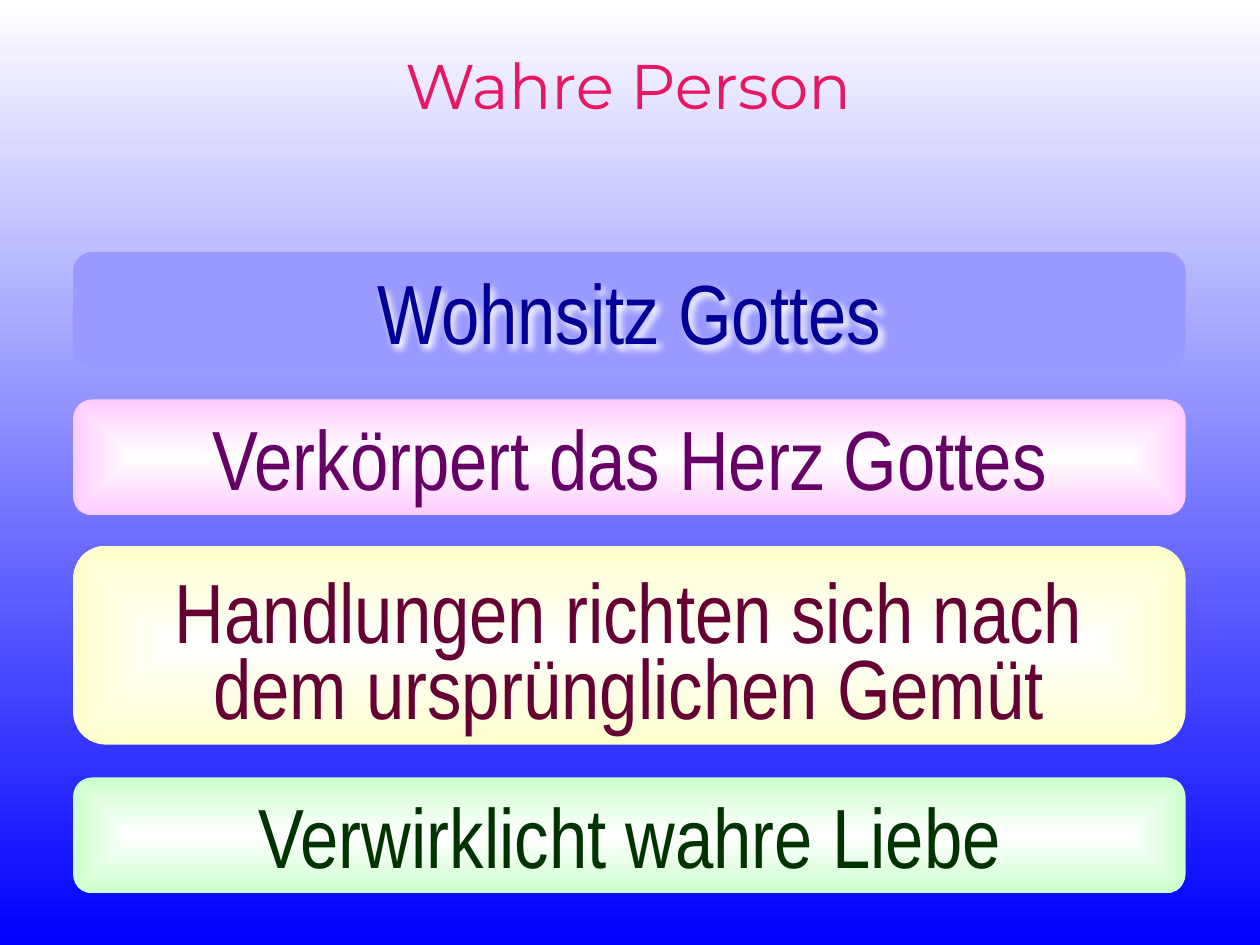
from lxml import etree
from pptx import Presentation
from pptx.dml.color import RGBColor
from pptx.enum.shapes import MSO_AUTO_SHAPE_TYPE as Preset
from pptx.enum.text import MSO_AUTO_SIZE as AutoSize, PP_ALIGN as Align
from pptx.oxml import parse_xml
from pptx.oxml.ns import nsdecls, qn
from pptx.util import Inches, Pt

WHITE = RGBColor(0xFF, 0xFF, 0xFF)
BLUE = RGBColor(0x00, 0x00, 0xFF)
CRIMSON = RGBColor(0xE8, 0x17, 0x66)
PERIWINKLE = RGBColor(0x99, 0x99, 0xFF)
PINK = RGBColor(0xFF, 0xCC, 0xFF)
CREAM = RGBColor(0xFF, 0xFF, 0xCC)
MINT = RGBColor(0xCC, 0xFF, 0xCC)
NAVY = RGBColor(0x00, 0x00, 0x99)
PURPLE = RGBColor(0x66, 0x00, 0x66)
MAROON = RGBColor(0x66, 0x00, 0x33)
FOREST = RGBColor(0x00, 0x33, 0x00)

OUTLINE = (f'<a:ln {nsdecls("a")} w="3175"><a:solidFill>'
           '<a:srgbClr val="FFFFFF"/></a:solidFill></a:ln>')
CENTRE_PATH = (f'<a:path {nsdecls("a")} path="shape"><a:fillToRect '
               'l="50000" t="50000" r="50000" b="50000"/></a:path>')


class SlideWriter:
    """Holds the text style and the slide being filled."""
    title_font, banner_font = "Montserrat", "Arial Narrow"
    title_size, banner_size = Pt(36), Pt(48)
    banner_left, banner_width = 0.58, 8.83

    def __init__(self, page):
        self.page = page

    def gradient(self, fill, first, last):
        fill.gradient()
        for stop, color, position in zip(fill.gradient_stops, (first, last), (0, 1)):
            stop.color.rgb = color
            stop.position = position

    def background(self, top, bottom):
        fill = self.page.background.fill
        self.gradient(fill, top, bottom)
        fill.gradient_angle = 270

    def text(self, shapes, area, words, font, size, color, wrap=True, spacing=None):
        box = shapes.add_textbox(*map(Inches, area))
        frame = box.text_frame
        frame.word_wrap = wrap
        frame.auto_size = AutoSize.SHAPE_TO_FIT_TEXT if wrap else AutoSize.NONE
        para = frame.paragraphs[0]
        para.alignment = Align.CENTER
        if spacing:
            para.line_spacing = spacing
        span = para.add_run()
        span.text = words
        span.font.name, span.font.size = font, size
        span.font.color.rgb = color
        span.font._element.insert(0, parse_xml(OUTLINE))
        return box

    def title(self, area, words, color):
        self.text(self.page.shapes, area, words, self.title_font,
                  self.title_size, color, wrap=False)

    def banner(self, top, height, edge, text_area, words, color,
               glowing=True, spacing=None):
        shapes = self.page.shapes.add_group_shape().shapes
        panel = shapes.add_shape(
            Preset.ROUNDED_RECTANGLE, Inches(self.banner_left), Inches(top),
            Inches(self.banner_width), Inches(height))
        panel.shadow.inherit = False
        panel.line.fill.background()
        if glowing:
            self.gradient(panel.fill, WHITE, edge)
            direction = panel._element.spPr.find(".//" + qn("a:lin"))
            direction.getparent().replace(direction, parse_xml(CENTRE_PATH))
        else:
            panel.fill.solid()
            panel.fill.fore_color.rgb = edge
        return self.text(shapes, text_area, words, self.banner_font,
                         self.banner_size, color, spacing=spacing)

    def white_shadow(self, box):
        box.shadow.inherit = False
        effects = box._element.spPr.find(qn("a:effectLst"))
        shadow = etree.SubElement(effects, qn("a:outerShdw"), blurRad="50800",
                                  dist="38100", dir="2700000", algn="tl")
        etree.SubElement(shadow, qn("a:srgbClr"), val=str(WHITE))


def main():
    deck = Presentation()
    deck.slide_width, deck.slide_height = Inches(10), Inches(7.5)
    writer = SlideWriter(deck.slides.add_slide(deck.slide_layouts[6]))

    # Background and title
    writer.background(WHITE, BLUE)
    writer.title((0.33, 0.32, 9.31, 1.1), "Wahre Person", CRIMSON)

    # Banners with a light centre
    writer.banner(3.17, 0.92, PINK, (1.23, 3.18, 7.54, 0.9),
                  "Verkörpert das Herz Gottes", PURPLE)
    writer.banner(4.33, 1.58, CREAM, (0.73, 4.58, 8.52, 1.3),
                  "Handlungen richten sich nach dem ursprünglichen Gemüt",
                  MAROON, spacing=0.75)
    writer.banner(6.17, 0.92, MINT, (1.5, 6.18, 7, 0.9),
                  "Verwirklicht wahre Liebe", FOREST)

    # Plain banner with shadowed text
    dwelling = writer.banner(2, 0.92, PERIWINKLE, (2.65, 2.02, 4.69, 0.9),
                             "Wohnsitz Gottes", NAVY, glowing=False)
    writer.white_shadow(dwelling)

    deck.save("out.pptx")


if __name__ == "__main__":
    main()
